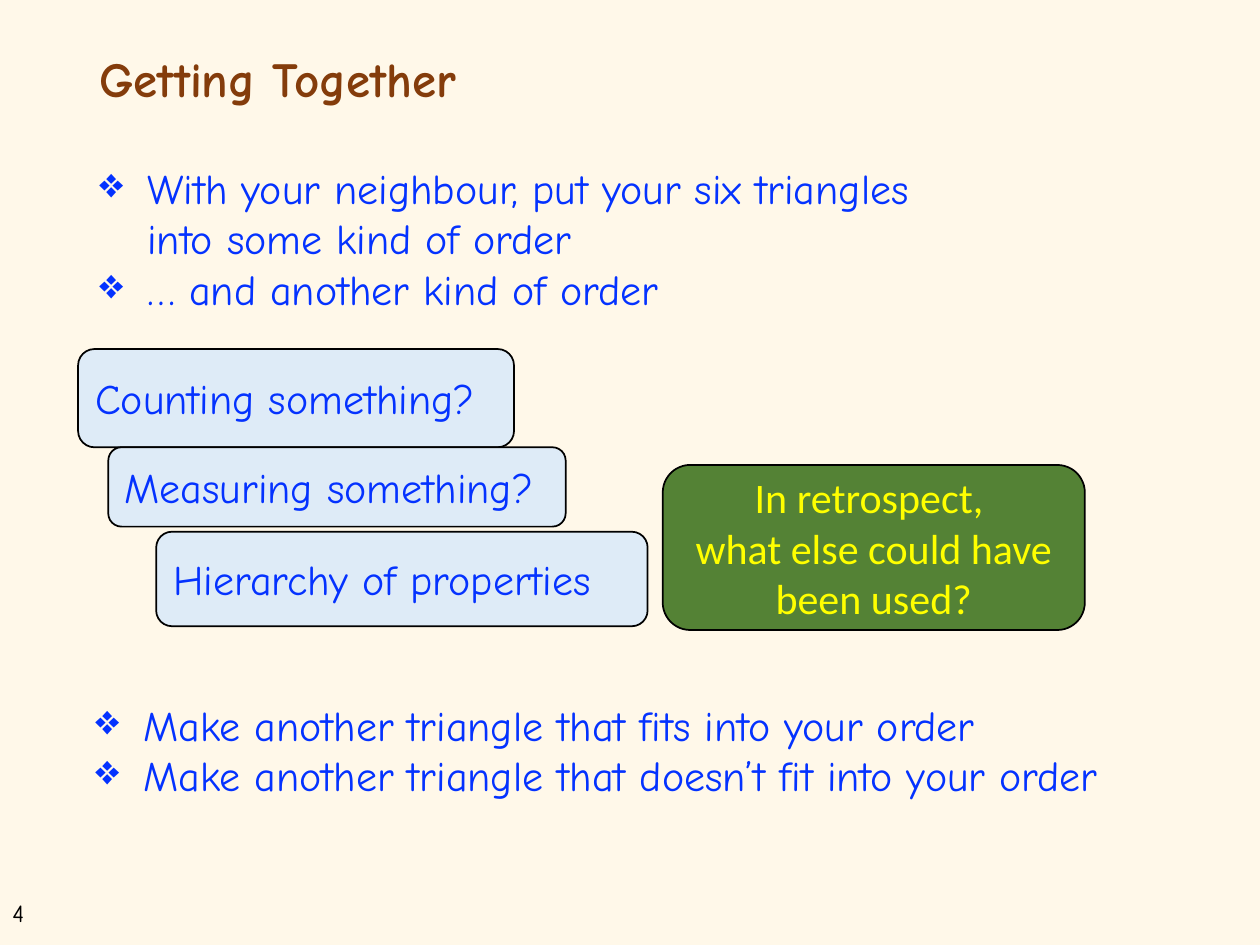
"""Build the "Getting Together" slide about ordering triangles."""
from dataclasses import dataclass

import lxml.etree
import pptx
import pptx.dml.color
import pptx.enum.shapes
import pptx.enum.text
import pptx.oxml.ns
import pptx.util

Inches = pptx.util.Inches
Pt = pptx.util.Pt
ALIGN = pptx.enum.text.PP_ALIGN
ANCHOR = pptx.enum.text.MSO_ANCHOR
HAND_FONT = "Comic Neue"
BLUE = "0432FF"
PALE_BLUE = "DEEBF7"


@dataclass(frozen=True)
class Box:
    left: float
    top: float
    width: float
    height: float

    def lengths(self) -> tuple:
        return tuple(map(Inches, (self.left, self.top, self.width, self.height)))


@dataclass(frozen=True)
class Style:
    size: float = 24
    color: str = BLUE
    font: str = HAND_FONT
    bold: bool = False


@dataclass(frozen=True)
class Card:
    box: Box
    lines: tuple[str, ...]
    fill: str = PALE_BLUE
    style: Style = Style()
    align: ALIGN = ALIGN.LEFT


CARDS = (
    Card(Box(0.62, 2.77, 3.46, 0.78), ("Counting something?",)),
    Card(Box(0.86, 3.55, 3.63, 0.63), ("Measuring something?",)),
    Card(Box(1.24, 4.22, 3.9, 0.75), ("Hierarchy of properties",)),
    Card(Box(5.26, 3.69, 3.35, 1.31),
         ("In retrospect, ", "what else could have been used?"),
         "548235", Style(color="FFFF00", font="Calibri"), ALIGN.CENTER),
)
TASKS = (
    (Box(0.69, 1.24, 6.79, 1.31),
     ("With your neighbour, put your six triangles into some kind of order",
      "… and another kind of order")),
    (Box(0.66, 5.5, 8.17, 1.31),
     ("Make another triangle that fits into your order",
      "Make another triangle that doesn’t fit into your order")),
)


def rgb(code: str) -> pptx.dml.color.RGBColor:
    return pptx.dml.color.RGBColor.from_string(code)


def add_run(paragraph, text: str, style: Style) -> None:
    run = paragraph.add_run()
    run.text = text
    run.font.name = style.font
    run.font.size = Pt(style.size)
    run.font.bold = style.bold
    run.font.color.rgb = rgb(style.color)


def add_bullet(paragraph) -> None:
    properties = paragraph._p.get_or_add_pPr()
    indent = Inches(0.38)
    properties.set("marL", str(indent))
    properties.set("indent", str(-indent))
    bullet = lxml.etree.SubElement(properties, pptx.oxml.ns.qn("a:buChar"))
    bullet.set("char", "❖")


def add_text(slide, box: Box, texts: tuple[str, ...], style: Style = Style(),
             bulleted: bool = False, anchor: ANCHOR = ANCHOR.TOP):
    frame = slide.shapes.add_textbox(*box.lengths()).text_frame
    frame.word_wrap = True
    frame.vertical_anchor = anchor
    for index, text in enumerate(texts):
        paragraph = frame.add_paragraph() if index else frame.paragraphs[0]
        if bulleted:
            add_bullet(paragraph)
        add_run(paragraph, text, style)
    return frame


def add_card(slide, card: Card) -> None:
    rounded = pptx.enum.shapes.MSO_SHAPE.ROUNDED_RECTANGLE
    shape = slide.shapes.add_shape(rounded, *card.box.lengths())
    shape.shadow.inherit = False
    shape.fill.solid()
    shape.fill.fore_color.rgb = rgb(card.fill)
    shape.line.color.rgb = rgb("000000")
    shape.line.width = Pt(1)
    frame = shape.text_frame
    frame.word_wrap = True
    frame.vertical_anchor = ANCHOR.MIDDLE
    paragraph = frame.paragraphs[0]
    paragraph.alignment = card.align
    for index, line in enumerate(card.lines):
        if index:
            paragraph.add_line_break()
        add_run(paragraph, line, card.style)


def main() -> None:
    deck = pptx.Presentation()
    deck.slide_width, deck.slide_height = Inches(10), Inches(7.5)
    slide = deck.slides.add_slide(deck.slide_layouts[6])
    slide.background.fill.solid()
    slide.background.fill.fore_color.rgb = rgb("FFF8E9")

    add_text(slide, Box(0, 7.08, 0.53, 0.34), ("4",), Style(14, "000000"))
    title = add_text(slide, Box(0.69, 0.4, 8.62, 0.5), ("Getting Together",),
                     Style(28, "843C0B", bold=True), anchor=ANCHOR.MIDDLE)
    title.paragraphs[0].line_spacing = 0.9
    opening, closing = TASKS
    add_text(slide, *opening, bulleted=True)
    for card in CARDS:
        add_card(slide, card)
    add_text(slide, *closing, bulleted=True)
    deck.save("out.pptx")


if __name__ == "__main__":
    main()
